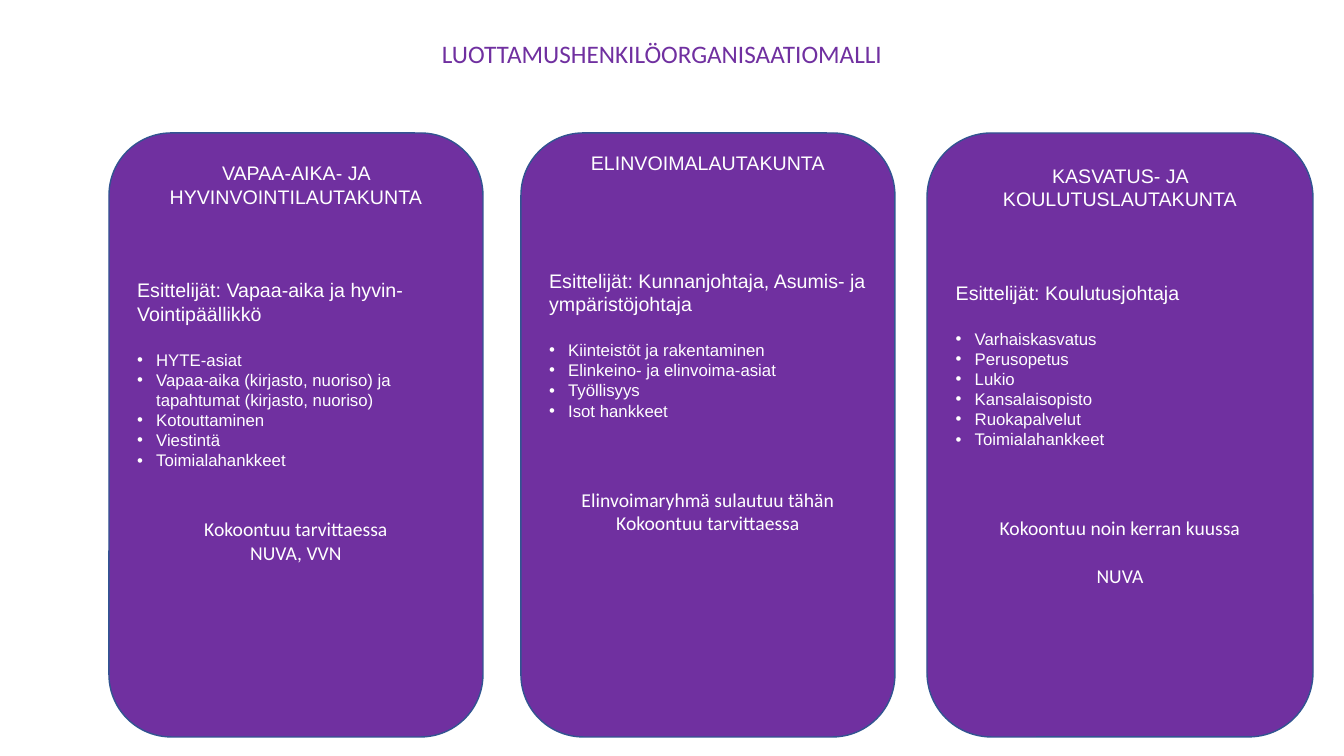
from lxml.etree import SubElement
from pptx import Presentation
from pptx.dml.color import RGBColor
from pptx.enum.shapes import MSO_SHAPE
from pptx.enum.text import MSO_ANCHOR, PP_ALIGN
from pptx.oxml.ns import qn
from pptx.util import Emu, Pt

PURPLE = RGBColor(0x70, 0x30, 0xA0)
OUTLINE = RGBColor(0x32, 0x54, 0x91)
WHITE = RGBColor(0xFF, 0xFF, 0xFF)

CARD_TOP, CARD_HEIGHT = 133, 604
BULLET_INDENT = 19
LINE_RATIO = 1.2

CARDS = [
    dict(left=109, width=374, inset=10,
         heading="VAPAA-AIKA- JA HYVINVOINTILAUTAKUNTA",
         presenters=[(70, "Esittelijät: Vapaa-aika ja hyvin-"), (0, "Vointipäällikkö")],
         topics=["HYTE-asiat",
                 "Vapaa-aika (kirjasto, nuoriso) ja tapahtumat (kirjasto, nuoriso)",
                 "Kotouttaminen", "Viestintä", "Toimialahankkeet"],
         notes=[(47, "Kokoontuu tarvittaessa"), (0, "NUVA, VVN")]),
    dict(left=521, width=374, inset=0,
         heading="ELINVOIMALAUTAKUNTA",
         presenters=[(94, "Esittelijät: Kunnanjohtaja, Asumis- ja ympäristöjohtaja")],
         topics=["Kiinteistöt ja rakentaminen", "Elinkeino- ja elinvoima-asiat",
                 "Työllisyys", "Isot hankkeet"],
         notes=[(67, "Elinvoimaryhmä sulautuu tähän"), (0, "Kokoontuu tarvittaessa")]),
    dict(left=927, width=386, inset=12,
         heading="KASVATUS- JA KOULUTUSLAUTAKUNTA",
         presenters=[(70, "Esittelijät: Koulutusjohtaja")],
         topics=["Varhaiskasvatus", "Perusopetus", "Lukio", "Kansalaisopisto",
                 "Ruokapalvelut", "Toimialahankkeet"],
         notes=[(67, "Kokoontuu noin kerran kuussa"), (24, "NUVA")]),
]


def px(n):
    return Emu(round(n * 914400 / 100.8))


def format_runs(p, size, font, color):
    for r in p.runs:
        r.font.size = Pt(size)
        r.font.name = font
        r.font.color.rgb = color


def add_bullet(p):
    pPr = p._p.get_or_add_pPr()
    pPr.set("marL", str(px(BULLET_INDENT)))
    pPr.set("indent", str(-px(BULLET_INDENT)))
    SubElement(pPr, qn("a:buFont")).set("typeface", "Arial")
    SubElement(pPr, qn("a:buChar")).set("char", "•")


def add_line(tf, text, gap=0, size=14, font="Arial", align=PP_ALIGN.LEFT, bullet=False):
    p = tf.add_paragraph() if tf.text else tf.paragraphs[0]
    p.text = text
    p.alignment = align
    p.line_spacing = Pt(size * LINE_RATIO)
    if gap:
        p.space_before = px(gap)
    if bullet:
        add_bullet(p)
    format_runs(p, size, font, WHITE)


def add_card(s, left, width, inset, heading, presenters, topics, notes):
    sp = s.shapes.add_shape(MSO_SHAPE.FLOWCHART_ALTERNATE_PROCESS,
                            px(left), px(CARD_TOP), px(width), px(CARD_HEIGHT))
    sp.shadow.inherit = False
    sp.fill.solid()
    sp.fill.fore_color.rgb = PURPLE
    sp.line.color.rgb = OUTLINE
    sp.line.width = Pt(1)
    tf = sp.text_frame
    tf.word_wrap = True
    tf.vertical_anchor = MSO_ANCHOR.TOP
    tf.margin_top = px(inset)
    add_line(tf, heading, align=PP_ALIGN.CENTER)
    for gap, text in presenters:
        add_line(tf, text, gap)
    for i, text in enumerate(topics):
        add_line(tf, text, 0 if i else 24, size=12, bullet=True)
    for gap, text in notes:
        add_line(tf, text, gap, font="Calibri", align=PP_ALIGN.CENTER)


def add_title(s, text):
    tf = s.shapes.add_textbox(px(432), px(33), px(815), px(40)).text_frame
    tf.word_wrap = True
    tf.text = text
    format_runs(tf.paragraphs[0], 18, "Calibri", PURPLE)


def main():
    prs = Presentation()
    prs.slide_width, prs.slide_height = px(1344), px(756)
    s = prs.slides.add_slide(prs.slide_layouts[6])
    add_title(s, "LUOTTAMUSHENKILÖORGANISAATIOMALLI")
    for card in CARDS:
        add_card(s, **card)
    prs.save("out.pptx")


if __name__ == "__main__":
    main()
